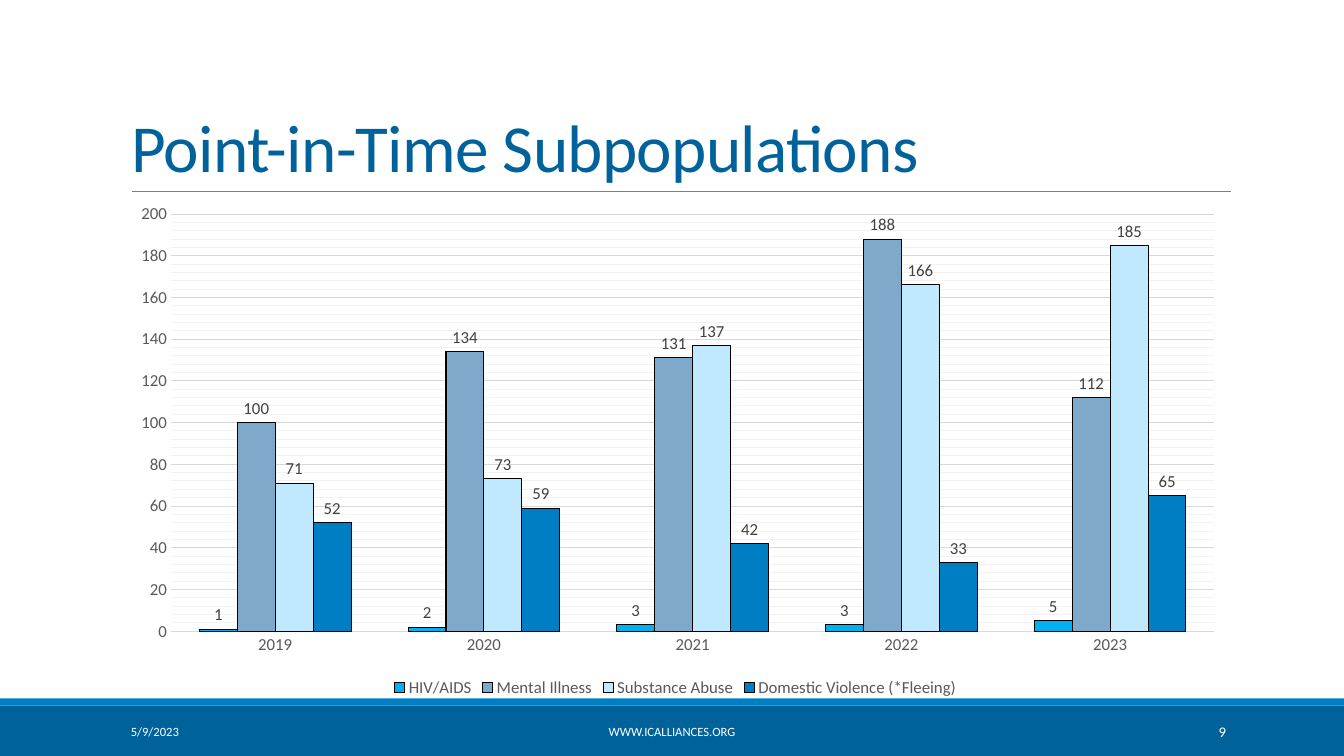
from dataclasses import dataclass

import pptx
import pptx.chart.data
import pptx.dml.color
import pptx.enum.chart
import pptx.enum.shapes
import pptx.enum.text
import pptx.oxml
import pptx.oxml.ns
import pptx.util
from pptx.util import Inches

ALIGN = pptx.enum.text.PP_ALIGN
ANCHOR = pptx.enum.text.MSO_ANCHOR
CHART = pptx.enum.chart


@dataclass(frozen=True)
class Theme:
    font: str = "Calibri"
    navy: str = "00629B"
    blue: str = "007EC4"
    white: str = "FFFFFF"
    rule: str = "808080"
    axis_text: str = "595959"
    label_text: str = "404040"
    outline: str = "000000"
    major_grid: str = "D9D9D9"
    minor_grid: str = "F2F2F2"
    title_size: float = 48
    chart_size: float = 12
    footer_size: float = 9
    number_size: float = 10.5


THEME = Theme()
YEARS = ["2019", "2020", "2021", "2022", "2023"]
SUBPOPULATIONS = [
    ("HIV/AIDS", [1, 2, 3, 3, 5], "00B0F0"),
    ("Mental Illness", [100, 134, 131, 188, 112], "7EA9CA"),
    ("Substance Abuse", [71, 73, 137, 166, 185], "C0E9FF"),
    ("Domestic Violence (*Fleeing)", [52, 59, 42, 33, 65], THEME.blue),
]
FOOTERS = [
    ("5/9/2023", 1.2, 2.7, ALIGN.LEFT, THEME.footer_size),
    ("WWW.ICALLIANCES.ORG", 4.03, 5.27, ALIGN.CENTER, THEME.footer_size),
    ("9", 10.83, 1.43, ALIGN.RIGHT, THEME.number_size),
]


def rgb(color):
    return pptx.dml.color.RGBColor.from_string(color)


def apply(target, formats):
    for name, value in formats.items():
        setattr(target, name, value)


def style_font(font, size, color):
    apply(font, {"name": THEME.font, "size": pptx.util.Pt(size), "bold": False})
    font.color.rgb = rgb(color)


def style_line(line, color, width):
    line.color.rgb = rgb(color)
    line.width = pptx.util.Pt(width)


def add_band(page, top, height, color):
    band = page.shapes.add_shape(
        pptx.enum.shapes.MSO_SHAPE.RECTANGLE,
        0, Inches(top), Inches(13.33), Inches(height))
    band.shadow.inherit = False
    band.fill.solid()
    band.fill.fore_color.rgb = rgb(color)
    band.line.fill.background()


def add_rule(page, left, right, top):
    rule = page.shapes.add_connector(
        pptx.enum.shapes.MSO_CONNECTOR.STRAIGHT,
        Inches(left), Inches(top), Inches(right), Inches(top))
    style_line(rule.line, THEME.rule, 0.5)
    properties = rule._element.spPr
    properties.append(pptx.oxml.parse_xml(
        f"<a:effectLst {pptx.oxml.ns.nsdecls('a')}/>"))


def write(box, text, size, color, align, anchor):
    frame = box.text_frame
    apply(frame, {"word_wrap": True, "vertical_anchor": anchor,
                  "auto_size": pptx.enum.text.MSO_AUTO_SIZE.NONE})
    para = frame.paragraphs[0]
    para.alignment = align
    span = para.add_run()
    span.text = text
    style_font(span.font, size, color)
    return para, span


def set_title(page, text):
    title = page.shapes.title
    apply(title, {"left": Inches(1.2), "top": Inches(0.31),
                  "width": Inches(11), "height": Inches(1.59)})
    para, span = write(title, text, THEME.title_size, THEME.navy,
                       ALIGN.LEFT, ANCHOR.BOTTOM)
    para.line_spacing = 0.85
    span.font._element.set("spc", "-50")


def add_footer(page, text, left, width, align, size):
    box = page.shapes.add_textbox(
        Inches(left), Inches(7.06), Inches(width), Inches(0.4))
    write(box, text, size, THEME.white, align, ANCHOR.MIDDLE)


def style_minor_grid(axis, color, width):
    grid = axis._element.find(pptx.oxml.ns.qn("c:minorGridlines"))
    grid.append(pptx.oxml.parse_xml(
        f"<c:spPr {pptx.oxml.ns.nsdecls('c', 'a')}>"
        f'<a:ln w="{pptx.util.Pt(width)}"><a:solidFill>'
        f'<a:srgbClr val="{color}"/></a:solidFill></a:ln></c:spPr>'))


def style_axes(chart):
    for axis in (chart.category_axis, chart.value_axis):
        apply(axis, {"major_tick_mark": CHART.XL_TICK_MARK.NONE,
                     "minor_tick_mark": CHART.XL_TICK_MARK.NONE})
        axis.format.line.fill.background()
        style_font(axis.tick_labels.font, THEME.chart_size, THEME.axis_text)
    values = chart.value_axis
    apply(values, {"minimum_scale": 0, "maximum_scale": 200,
                   "major_unit": 20, "minor_unit": 4,
                   "has_major_gridlines": True, "has_minor_gridlines": True})
    apply(values.tick_labels, {"number_format": "#,##0",
                               "number_format_is_linked": False})
    style_line(values.major_gridlines.format.line, THEME.major_grid, 0.75)
    style_minor_grid(values, THEME.minor_grid, 0.75)


def style_series(series, color):
    series.format.fill.solid()
    series.format.fill.fore_color.rgb = rgb(color)
    style_line(series.format.line, THEME.outline, 0.75)
    series.invert_if_negative = False
    labels = series.data_labels
    apply(labels, {"show_value": True,
                   "position": CHART.XL_LABEL_POSITION.OUTSIDE_END})
    style_font(labels.font, THEME.chart_size, THEME.label_text)


def place_plot(chart, left, top, width, height):
    area = chart._chartSpace.chart.plotArea
    for layout in area.findall(pptx.oxml.ns.qn("c:layout")):
        area.remove(layout)
    sizes = {"x": left, "y": top, "w": width, "h": height}
    modes = "".join(f'<c:{side}Mode val="edge"/>' for side in "xy")
    extents = "".join(f'<c:{key} val="{size}"/>' for key, size in sizes.items())
    area.insert(0, pptx.oxml.parse_xml(
        f"<c:layout {pptx.oxml.ns.nsdecls('c')}><c:manualLayout>"
        f'<c:layoutTarget val="inner"/>{modes}{extents}'
        "</c:manualLayout></c:layout>"))


def add_column_chart(page):
    data = pptx.chart.data.CategoryChartData()
    data.categories = YEARS
    for name, counts, _ in SUBPOPULATIONS:
        data.add_series(name, counts)
    chart = page.shapes.add_chart(
        CHART.XL_CHART_TYPE.COLUMN_CLUSTERED, Inches(1.2), Inches(2.02),
        Inches(11), Inches(4.94), data).chart
    style_font(chart.font, 10, THEME.outline)
    apply(chart, {"has_title": False, "has_legend": True})
    apply(chart.legend, {"position": CHART.XL_LEGEND_POSITION.BOTTOM,
                         "include_in_layout": False})
    style_font(chart.legend.font, THEME.chart_size, THEME.axis_text)
    plot = chart.plots[0]
    apply(plot, {"gap_width": 150, "overlap": 0, "vary_by_categories": False})
    for series, (_, _, color) in zip(plot.series, SUBPOPULATIONS):
        style_series(series, color)
    style_axes(chart)
    place_plot(chart, 0.045, 0.021, 0.941, 0.838)


def main():
    deck = pptx.Presentation()
    apply(deck, {"slide_width": Inches(13.33), "slide_height": Inches(7.5)})
    page = deck.slides.add_slide(deck.slide_layouts.get_by_name("Title Only"))
    add_band(page, 7, 0.5, THEME.navy)
    add_band(page, 6.93, 0.07, THEME.blue)
    add_rule(page, 1.31, 12.21, 1.9)
    set_title(page, "Point-in-Time Subpopulations")
    add_column_chart(page)
    for footer in FOOTERS:
        add_footer(page, *footer)
    deck.save("out.pptx")


if __name__ == "__main__":
    main()
